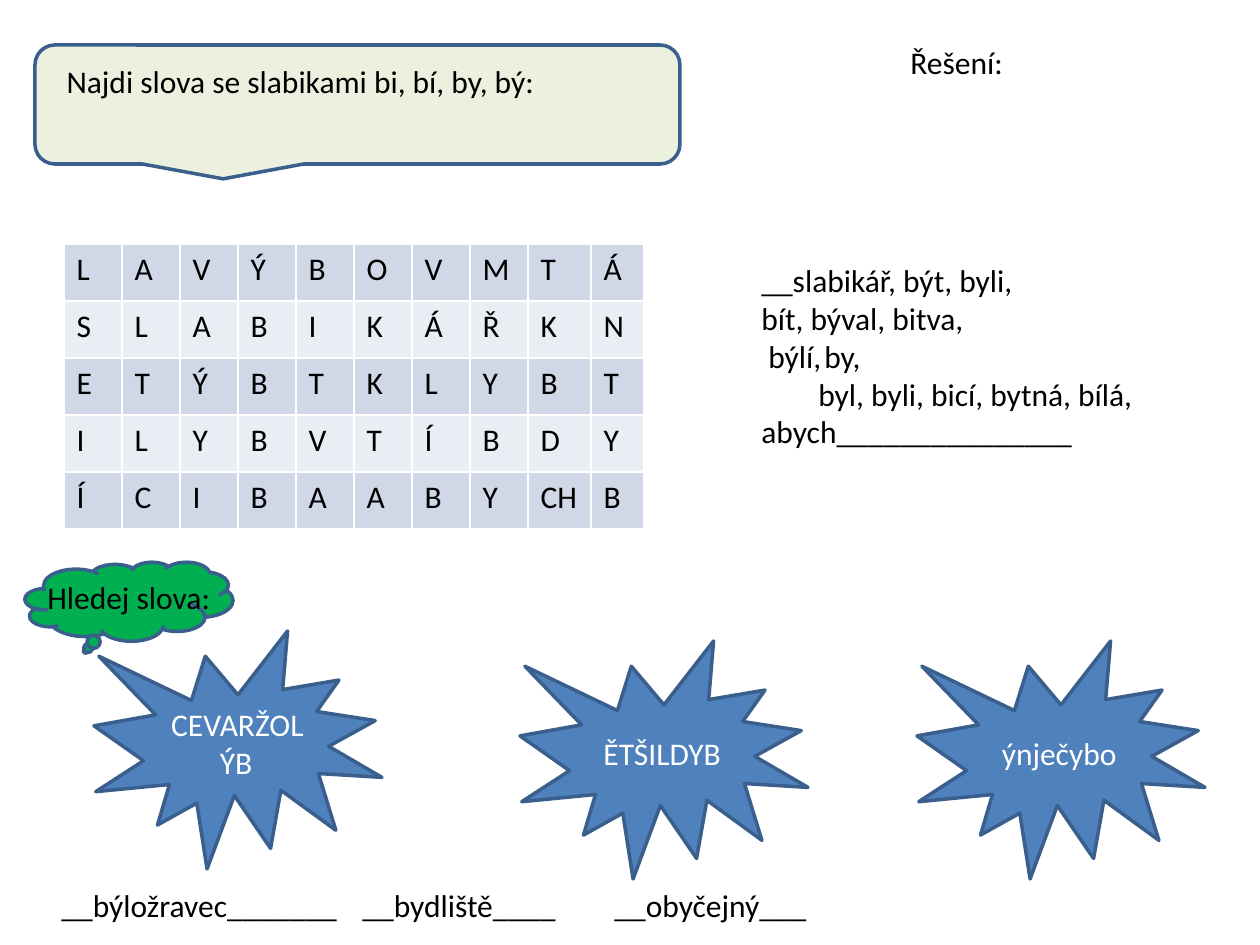
from lxml import etree
from pptx import Presentation
from pptx.dml.color import RGBColor
from pptx.enum.shapes import MSO_SHAPE
from pptx.enum.text import MSO_ANCHOR, PP_ALIGN
from pptx.oxml.ns import qn
from pptx.util import Emu, Pt

CLOUD = MSO_SHAPE.CLOUD_CALLOUT
BUBBLE = MSO_SHAPE.ROUNDED_RECTANGULAR_CALLOUT
BURST = MSO_SHAPE.EXPLOSION1
LEFT, CENTER = PP_ALIGN.LEFT, PP_ALIGN.CENTER
TOP, MIDDLE = MSO_ANCHOR.TOP, MSO_ANCHOR.MIDDLE

GRID = ["L A V Ý B O V M T Á", "S L A B I K Á Ř K N", "E T Ý B T K L Y B T",
        "I L Y B V T Í B D Y", "Í C I B A A B Y CH B"]
WIDTHS = [58] * 8 + [63, 53]
BANDS = ["D0D8E8", "E9EDF4"]
WORDS = [
    ("__slabikář, být, byli,", 0, []),
    ("bít, býval, bitva,", 0, []),
    ("býlí,\tby,", 7, [88]),
    ("byl, byli, bicí, bytná, bílá, abych_______________", 57, []),
]
BURSTS = [("CEVARŽOLÝB", 94, 631), ("ĚTŠILDYB", 520, 641), ("ýnječybo", 917, 641)]
BLANKS = "__býložravec_______\t__bydliště____\t__obyčejný___"


def px(n):
    return Emu(n * 914400 // 126)


def color(code):
    return RGBColor.from_string(code)


def style(para, ink="000000", align=LEFT):
    para.alignment = align
    para.font.name = "Calibri"
    para.font.size = Pt(18)
    para.font.color.rgb = color(ink)


def indent(para, first, stops):
    props = para._p.get_or_add_pPr()
    props.set("marL", "0")
    props.set("indent", str(px(first)))
    if stops:
        tabs = etree.SubElement(props, qn("a:tabLst"))
        for stop in stops:
            etree.SubElement(tabs, qn("a:tab"), pos=str(px(stop)), algn="l")


def add_shape(slide, kind, box, fill, text=""):
    shape = slide.shapes.add_shape(kind, *map(px, box))
    shape.shadow.inherit = False
    shape.fill.solid()
    shape.fill.fore_color.rgb = color(fill)
    shape.line.color.rgb = color("3A5F8C")
    shape.line.width = Pt(2)
    if text:
        frame = shape.text_frame
        frame.word_wrap = True
        frame.vertical_anchor = MIDDLE
        frame.text = text
        style(frame.paragraphs[0], "FFFFFF", CENTER)
    return shape


def add_title(slide, text, box, back):
    title = slide.shapes.title
    title.left, title.top, title.width, title.height = map(px, box)
    title.text_frame.text = text
    title.text_frame.vertical_anchor = TOP
    style(title.text_frame.paragraphs[0])
    back._element.addnext(title._element)


def add_text(slide, box, lines):
    frame = slide.shapes.add_textbox(*map(px, box)).text_frame
    frame.word_wrap = True
    for i, (text, first, stops) in enumerate(lines):
        para = frame.add_paragraph() if i else frame.paragraphs[0]
        para.text = text
        style(para)
        indent(para, first, stops)


def add_grid(slide, left, top, high):
    rows = [line.split() for line in GRID]
    table = slide.shapes.add_table(
        len(rows), len(WIDTHS), px(left), px(top),
        px(sum(WIDTHS)), px(high * len(rows))).table
    table.first_row = False
    for col, wide in zip(table.columns, WIDTHS):
        col.width = px(wide)
    for r, row in enumerate(rows):
        table.rows[r].height = px(high)
        for c, text in enumerate(row):
            cell = table.cell(r, c)
            cell.text = text
            cell.fill.solid()
            cell.fill.fore_color.rgb = color(BANDS[r % 2])
            style(cell.text_frame.paragraphs[0])


def main():
    deck = Presentation()
    deck.slide_width, deck.slide_height = px(1260), px(945)
    slide = deck.slides.add_slide(deck.slide_layouts[5])
    add_shape(slide, CLOUD, (25, 562, 208, 79), "00B050")
    bubble = add_shape(slide, BUBBLE, (35, 45, 645, 119), "EBF1DE")
    add_title(slide, "Najdi slova se slabikami bi, bí, by, bý:",
              (54, 56, 745, 51), bubble)
    add_grid(slide, 64, 244, 57)
    add_text(slide, (749, 255, 427, 204), WORDS)
    for text, left, top in BURSTS:
        add_shape(slide, BURST, (left, top, 288, 238), "4F81BD", text)
    add_text(slide, (35, 572, 189, 51), [("Hledej slova:", 0, [])])
    add_text(slide, (35, 880, 1191, 51), [(BLANKS, 14, [502, 895])])
    add_text(slide, (898, 37, 228, 51), [("Řešení:", 0, [])])
    deck.save("out.pptx")


if __name__ == "__main__":
    main()
